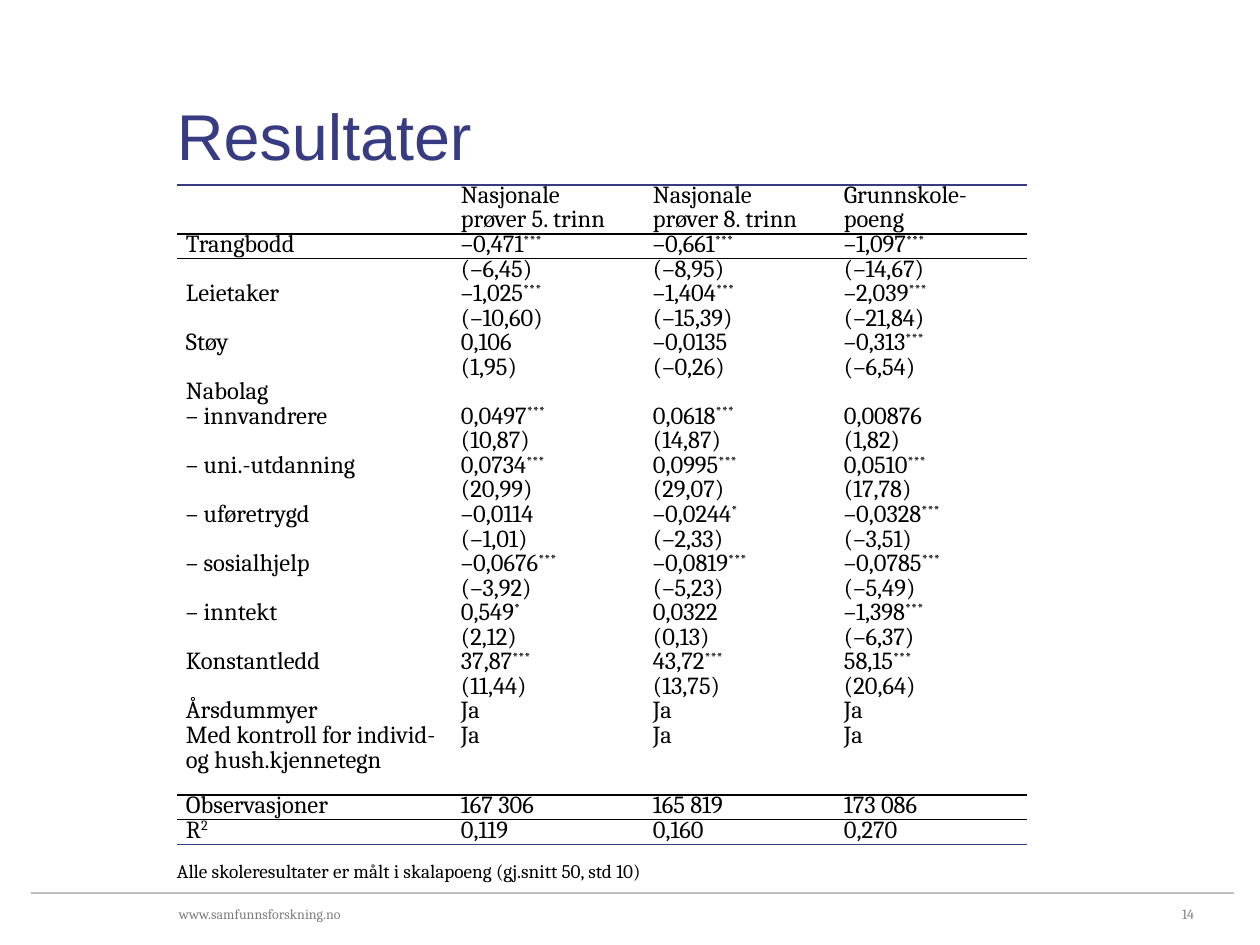
from dataclasses import dataclass
from typing import NamedTuple

from lxml.etree import SubElement
from pptx import Presentation
from pptx.dml.color import RGBColor
from pptx.enum.shapes import MSO_CONNECTOR
from pptx.enum.text import MSO_ANCHOR, PP_ALIGN
from pptx.oxml.ns import qn
from pptx.util import Emu, Pt

PX_PER_INCH = 126
BLUE = RGBColor(0x37, 0x3C, 0x82)
BLACK = RGBColor(0x00, 0x00, 0x00)
GREY = RGBColor(0x7F, 0x7F, 0x7F)
RULE_GREY = RGBColor(0xBE, 0xBE, 0xBE)
NO_GRID_STYLE = "{2D5ABB26-0587-4C30-8999-92F81FD0307C}"
LEFT = 177
COLUMNS = (275, 192, 191, 192)
HEADER_HEIGHT, ROW_HEIGHT, CONTROL_HEIGHT = 49, 24, 70


def px(n: int) -> Emu:
    return Emu(round(n * 914400 / PX_PER_INCH))


@dataclass
class Label:
    text: str
    box: tuple[int, int, int, int]
    size: int
    color: RGBColor
    font: str = "Cambria"
    anchor: MSO_ANCHOR = MSO_ANCHOR.TOP
    align: PP_ALIGN = PP_ALIGN.LEFT


class Row(NamedTuple):
    label: str
    values: tuple[str, ...] = ("", "", "")
    t_values: tuple[str, ...] = ()
    height: int = ROW_HEIGHT


class Rule(NamedTuple):
    edge: str
    color: RGBColor
    width: float = 1


LABELS = (
    Label("www.samfunnsforskning.no", (179, 906, 297, 16), 8, GREY, anchor=MSO_ANCHOR.MIDDLE),
    Label("Resultater", (LEFT, 94, 1017, 79), 37, BLUE, "Arial", MSO_ANCHOR.BOTTOM),
    Label("14", (1090, 906, 104, 16), 8, GREY, anchor=MSO_ANCHOR.MIDDLE, align=PP_ALIGN.RIGHT),
    Label("Alle skoleresultater er målt i skalapoeng (gj.snitt 50, std 10)",
          (LEFT, 859, 839, 24), 11, BLACK),
)

ROWS = (
    Row("", ("Nasjonale\nprøver 5. trinn", "Nasjonale\nprøver 8. trinn", "Grunnskole-poeng"),
        height=HEADER_HEIGHT),
    Row("Trangbodd", ("–0,471^***", "–0,661^***", "–1,097^***"), ("–6,45", "–8,95", "–14,67")),
    Row("Leietaker", ("–1,025^***", "–1,404^***", "–2,039^***"), ("–10,60", "–15,39", "–21,84")),
    Row("Støy", ("0,106", "–0,0135", "–0,313^***"), ("1,95", "–0,26", "–6,54")),
    Row("Nabolag"),
    Row("– innvandrere", ("0,0497^***", "0,0618^***", "0,00876"), ("10,87", "14,87", "1,82")),
    Row("– uni.-utdanning", ("0,0734^***", "0,0995^***", "0,0510^***"), ("20,99", "29,07", "17,78")),
    Row("– uføretrygd", ("–0,0114", "–0,0244^*", "–0,0328^***"), ("–1,01", "–2,33", "–3,51")),
    Row("– sosialhjelp", ("–0,0676^***", "–0,0819^***", "–0,0785^***"), ("–3,92", "–5,23", "–5,49")),
    Row("– inntekt", ("0,549^*", "0,0322", "–1,398^***"), ("2,12", "0,13", "–6,37")),
    Row("Konstantledd", ("37,87^***", "43,72^***", "58,15^***"), ("11,44", "13,75", "20,64")),
    Row("Årsdummyer", ("Ja",) * 3),
    Row("Med kontroll for individ- og hush.kjennetegn", ("Ja",) * 3, height=CONTROL_HEIGHT),
    Row("Observasjoner", ("167 306", "165 819", "173 086")),
    Row("R^2", ("0,119", "0,160", "0,270")),
)

RULES = {
    0: (Rule("lnT", BLUE, 0.75), Rule("lnB", BLACK)),
    1: (Rule("lnT", BLACK),),
    21: (Rule("lnB", BLACK),),
    22: (Rule("lnT", BLACK),),
    23: (Rule("lnB", BLUE),),
}


def set_attrs(obj, values: dict) -> None:
    for name, value in values.items():
        setattr(obj, name, value)


def add_run(p, text: str, size: int, color: RGBColor, font: str = "Cambria"):
    r = p.add_run()
    r.text = text
    set_attrs(r.font, {"size": Pt(size), "name": font})
    r.font.color.rgb = color
    return r


def add_label(s, label: Label) -> None:
    sp = s.shapes.add_textbox(*map(px, label.box))
    tf = sp.text_frame
    set_attrs(tf, {"word_wrap": True, "vertical_anchor": label.anchor, "margin_left": 0,
                   "margin_top": 0, "margin_right": 0, "margin_bottom": 0})
    p = tf.paragraphs[0]
    p.alignment = label.align
    add_run(p, label.text, label.size, label.color, label.font)


def add_footer_line(s) -> None:
    line = s.shapes.add_connector(MSO_CONNECTOR.STRAIGHT, px(31), px(893), px(1234), px(893))
    line.line.color.rgb = RULE_GREY
    line.line.width = Pt(1)
    SubElement(line._element.spPr, qn("a:effectLst"))


def add_border(cell, rule: Rule) -> None:
    ln = SubElement(cell._tc.get_or_add_tcPr(), qn(f"a:{rule.edge}"), w=str(Pt(rule.width)))
    fill = SubElement(ln, qn("a:solidFill"))
    SubElement(fill, qn("a:srgbClr"), val=str(rule.color))


def fill_cell(cell, text: str, align: PP_ALIGN) -> None:
    set_attrs(cell, {"margin_left": px(9), "margin_right": px(9),
                     "margin_top": 0, "margin_bottom": 0})
    tf = cell.text_frame
    for i, line in enumerate(text.split("\n")):
        p = tf.add_paragraph() if i else tf.paragraphs[0]
        set_attrs(p, {"alignment": align, "line_spacing": Pt(14)})
        base, _, raised = line.partition("^")
        if base:
            add_run(p, base, 14, BLACK)
        else:
            SubElement(p._p, qn("a:endParaRPr"), sz="1000")
        if raised:
            r = add_run(p, raised, 14, BLACK)
            r.font._element.set("baseline", "30000")


def table_lines(rows: tuple[Row, ...]) -> list[tuple[int, tuple[str, ...]]]:
    lines = []
    for row in rows:
        lines.append((row.height, (row.label, *row.values)))
        if row.t_values:
            lines.append((ROW_HEIGHT, ("", *(f"({t})" for t in row.t_values))))
    return lines


def add_results(s) -> None:
    lines = table_lines(ROWS)
    height = sum(h for h, _ in lines)
    frame = s.shapes.add_table(len(lines), len(COLUMNS), px(LEFT), px(185),
                               px(sum(COLUMNS)), px(height))
    table = frame.table
    set_attrs(table, {"first_row": False, "horz_banding": False})
    table._tbl.tblPr.find(qn("a:tableStyleId")).text = NO_GRID_STYLE
    for column, width in zip(table.columns, COLUMNS):
        column.width = px(width)
    for i, (height, texts) in enumerate(lines):
        table.rows[i].height = px(height)
        for j, text in enumerate(texts):
            cell = table.cell(i, j)
            fill_cell(cell, text, PP_ALIGN.JUSTIFY if j else PP_ALIGN.LEFT)
            for rule in RULES.get(i, ()):
                add_border(cell, rule)
            cell.fill.background()


def main() -> None:
    prs = Presentation()
    set_attrs(prs, {"slide_width": px(1260), "slide_height": px(945)})
    s = prs.slides.add_slide(prs.slide_layouts[6])
    add_footer_line(s)
    for label in LABELS:
        add_label(s, label)
    add_results(s)
    prs.save("out.pptx")


if __name__ == "__main__":
    main()
